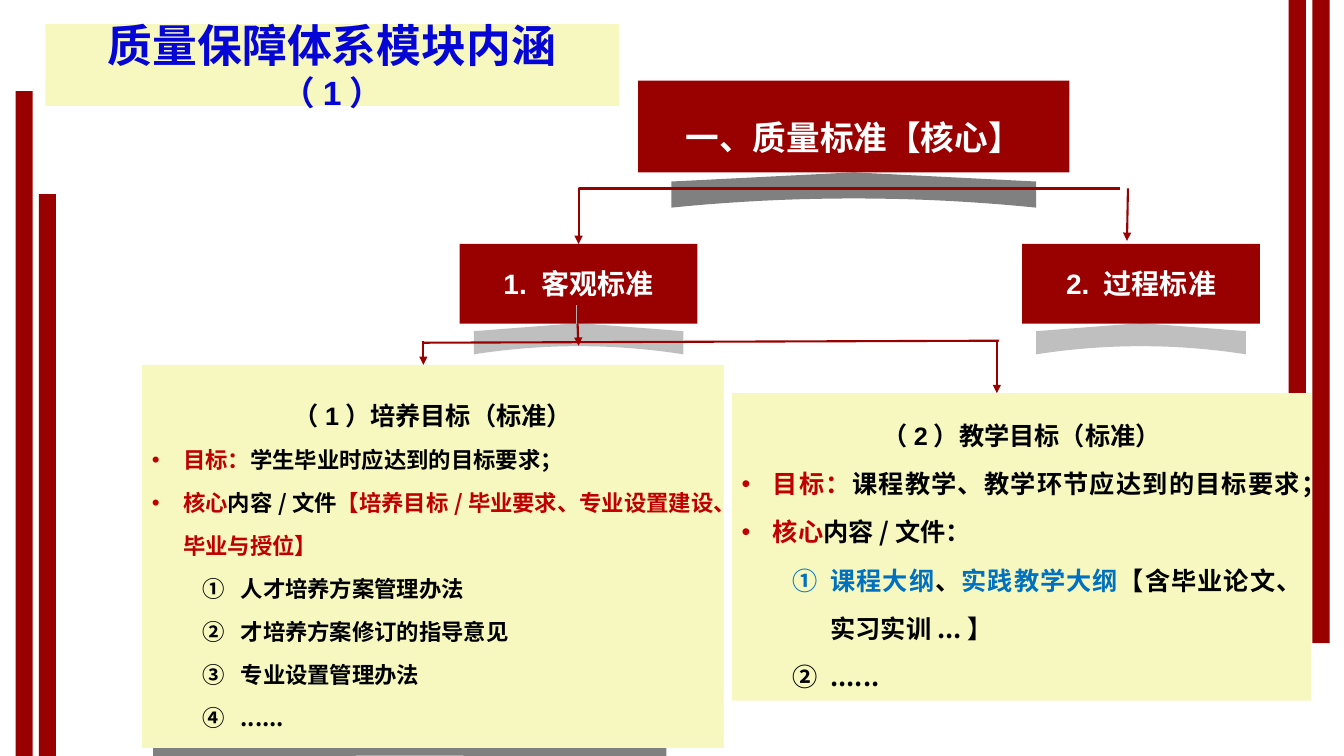
from lxml import etree
from pptx import Presentation
from pptx.dml.color import RGBColor
from pptx.enum.shapes import MSO_CONNECTOR, MSO_SHAPE
from pptx.enum.text import MSO_ANCHOR, MSO_AUTO_SIZE, PP_ALIGN
from pptx.oxml.ns import qn
from pptx.util import Inches, Pt

CELL = Inches(0.1)
COLUMNS, ROWS = 133.33, 75
TITLE_ONLY = 5
STRAIGHT, ELBOW = MSO_CONNECTOR.STRAIGHT, MSO_CONNECTOR.ELBOW
RECTANGLE = MSO_SHAPE.RECTANGLE
MIDDLE, NO_FIT = MSO_ANCHOR.MIDDLE, MSO_AUTO_SIZE.NONE
CENTER, JUSTIFY = PP_ALIGN.CENTER, PP_ALIGN.JUSTIFY

LATIN, CHINESE = "Arial", "Noto Sans CJK SC"
MAROON, CREAM, WHITE, BLACK = "990000", "F6F8BF", "FFFFFF", "000000"
RED, BLUE, TITLE_BLUE = "C00000", "0070C0", "0505D5"
DARK_GREY, LIGHT_GREY, HAIRLINE = "808080", "BFBFBF", "B0B0B0"

BARS = [(1.55, 9.05, 66), (130.2, -0.1, 63.9), (3.85, 19.25, 55.8), (127.85, -0.05, 49.4)]

GOAL_PANEL = [
    ("heading", [("（1）培养目标（标准）", BLACK)]),
    ("bullet", [("目标：", RED), ("学生毕业时应达到的目标要求；", BLACK)]),
    ("bullet", [("核心", RED), ("内容/文件", BLACK),
                ("【培养目标/毕业要求、专业设置建设、毕业与授位】", RED)]),
    ("number", [("人才培养方案管理办法", BLACK)]),
    ("number", [("才培养方案修订的指导意见", BLACK)]),
    ("number", [("专业设置管理办法", BLACK)]),
    ("number", [("......", BLACK)]),
]
TEACHING_PANEL = [
    ("heading", [("（2）教学目标（标准）", BLACK)]),
    ("bullet", [("目标：", RED), ("课程教学、教学环节应达到的目标要求；", BLACK)]),
    ("bullet", [("核心", RED), ("内容/文件：", BLACK)]),
    ("number", [("课程大纲", BLUE), ("、", BLACK), ("实践教学大纲", BLUE),
                ("【含毕业论文、实习实训...】", BLACK)]),
    ("number", [("......", BLACK)]),
]
INDENTS = {"bullet": (0.31, -0.31), "number": (0.88, -0.38)}
MARKERS = {"bullet": ("a:buChar", "char", "•"),
           "number": ("a:buAutoNum", "type", "circleNumDbPlain")}


def grid(*cells):
    return [round(cell * CELL) for cell in cells]


def color(target, value):
    target.rgb = RGBColor.from_string(value)


def apply(target, values):
    for name, value in values.items():
        setattr(target, name, value)


def paint(shape, fill):
    shape.shadow.inherit = False
    shape.fill.solid()
    color(shape.fill.fore_color, fill)
    shape.line.fill.background()


def block(slide, box, fill):
    shape = slide.shapes.add_shape(RECTANGLE, *grid(*box))
    paint(shape, fill)
    return shape


def write(paragraph, text, size, text_color, font=LATIN):
    run = paragraph.add_run()
    run.text = text
    apply(run.font, {"size": Pt(size), "bold": True, "name": font})
    color(run.font.color, text_color)
    east_asian = etree.SubElement(run.font._element, qn("a:ea"))
    east_asian.set("typeface", CHINESE)


def label(slide, box, text, size, **spacing):
    frame = block(slide, box, MAROON).text_frame
    apply(frame, {"vertical_anchor": MIDDLE, "word_wrap": True})
    paragraph = frame.paragraphs[0]
    apply(paragraph, {"alignment": CENTER, **spacing})
    write(paragraph, text, size, WHITE)


def curved_shadow(slide, box, fill):
    left, top, width, height = box
    steps = [1 - i / 10 for i in range(21)]
    arc = [(u, 0.74 + 0.26 * u * u) for u in steps]
    outline = arc + [(-1, 0.26), (0, 0), (1, 0.26)]
    points = [grid(left + width * (1 + u) / 2, top + height * v) for u, v in outline]
    builder = slide.shapes.build_freeform(*points[0])
    builder.add_line_segments(points[1:], close=True)
    paint(builder.convert_to_shape(), fill)


def mark(paragraph, kind):
    tag, attribute, value = MARKERS[kind]
    left, hanging = INDENTS[kind]
    properties = paragraph._p.get_or_add_pPr()
    properties.set("marL", str(Inches(left)))
    properties.set("indent", str(Inches(hanging)))
    font = etree.SubElement(properties, qn("a:buFont"))
    font.set("typeface", LATIN)
    etree.SubElement(properties, qn(tag)).set(attribute, value)


def panel(slide, box, lines, body_size):
    frame = block(slide, box, CREAM).text_frame
    side, end = grid(1, 3.9)
    apply(frame, {"vertical_anchor": MIDDLE, "word_wrap": True,
                  "margin_left": side, "margin_right": side,
                  "margin_top": end, "margin_bottom": end})
    for index, (kind, runs) in enumerate(lines):
        paragraph = frame.add_paragraph() if index else frame.paragraphs[0]
        heading = kind == "heading"
        apply(paragraph, {"alignment": CENTER if heading else JUSTIFY,
                          "line_spacing": 1.6, "level": int(kind == "number")})
        if not heading:
            mark(paragraph, kind)
        for text, text_color in runs:
            write(paragraph, text, 18 if heading else body_size, text_color,
                  LATIN if heading else CHINESE)


def link(slide, ends, arrow=False, kind=STRAIGHT, stroke=MAROON, width=1.5):
    connector = slide.shapes.add_connector(kind, *grid(*ends))
    color(connector.line.color, stroke)
    connector.line.width = Pt(width)
    properties = connector._element.spPr
    if kind == ELBOW:
        properties.find(qn("a:prstGeom")).set("prst", "bentConnector2")
    if arrow:
        tail = etree.SubElement(connector.line._get_or_add_ln(), qn("a:tailEnd"))
        tail.set("type", "triangle")
    etree.SubElement(properties, qn("a:effectLst"))


def title(slide):
    heading = slide.shapes.title
    left, top, width, height = grid(4.5, 2.4, 56.9, 8.1)
    apply(heading, {"left": left, "top": top, "width": width, "height": height})
    outline = etree.SubElement(heading._element.spPr, qn("a:prstGeom"))
    outline.set("prst", "roundRect")
    etree.SubElement(outline, qn("a:avLst"))
    paint(heading, CREAM)
    side, end = grid(3, 0.5)
    frame = heading.text_frame
    apply(frame, {"vertical_anchor": MIDDLE, "word_wrap": True, "auto_size": NO_FIT,
                  "margin_left": side, "margin_right": side,
                  "margin_top": end, "margin_bottom": end})
    paragraph = frame.paragraphs[0]
    paragraph.alignment = CENTER
    write(paragraph, "质量保障体系模块内涵", 32, TITLE_BLUE)
    write(paragraph, "（1）", 24, TITLE_BLUE)


def main():
    deck = Presentation()
    deck.slide_width, deck.slide_height = grid(COLUMNS, ROWS)
    slide = deck.slides.add_slide(deck.slide_layouts[TITLE_ONLY])
    title(slide)
    for left, top, height in BARS:
        block(slide, (left, top, 1.7, height), MAROON)

    curved_shadow(slide, (15.2, 73.4, 50.9, 2.1), DARK_GREY)
    for left, text in ((45.6, "1. 客观标准"), (101.4, "2. 过程标准")):
        curved_shadow(slide, (left + 1.4, 32.05, 20.8, 3.1), LIGHT_GREY)
        label(slide, (left, 24.2, 23.6, 7.9), text, 20)
    curved_shadow(slide, (66.6, 17.1, 36.2, 3.5), DARK_GREY)
    label(slide, (63.3, 8, 42.8, 9.1), "一、质量标准【核心】", 24,
          line_spacing=1.5, space_after=Pt(6))

    link(slide, (78.5, 18.7, 57.4, 24.2), arrow=True, kind=ELBOW)
    panel(slide, (14.1, 36.2, 57.7, 38), GOAL_PANEL, 16)
    link(slide, (57.2, 30.3, 57.2, 33.9), stroke=HAIRLINE, width=0.5)
    link(slide, (42, 34, 99.1, 33.8))
    link(slide, (98.9, 33.9, 98.9, 39), arrow=True)
    link(slide, (42, 33.8, 42, 36.2), arrow=True)
    link(slide, (77.9, 18.7, 111.1, 18.7))
    link(slide, (111.9, 18.7, 111.8, 23.9), arrow=True)
    panel(slide, (72.6, 39, 57.5, 30.5), TEACHING_PANEL, 18)
    link(slide, (57.3, 32.1, 57.4, 34.3), arrow=True)
    deck.save("out.pptx")


if __name__ == "__main__":
    main()
